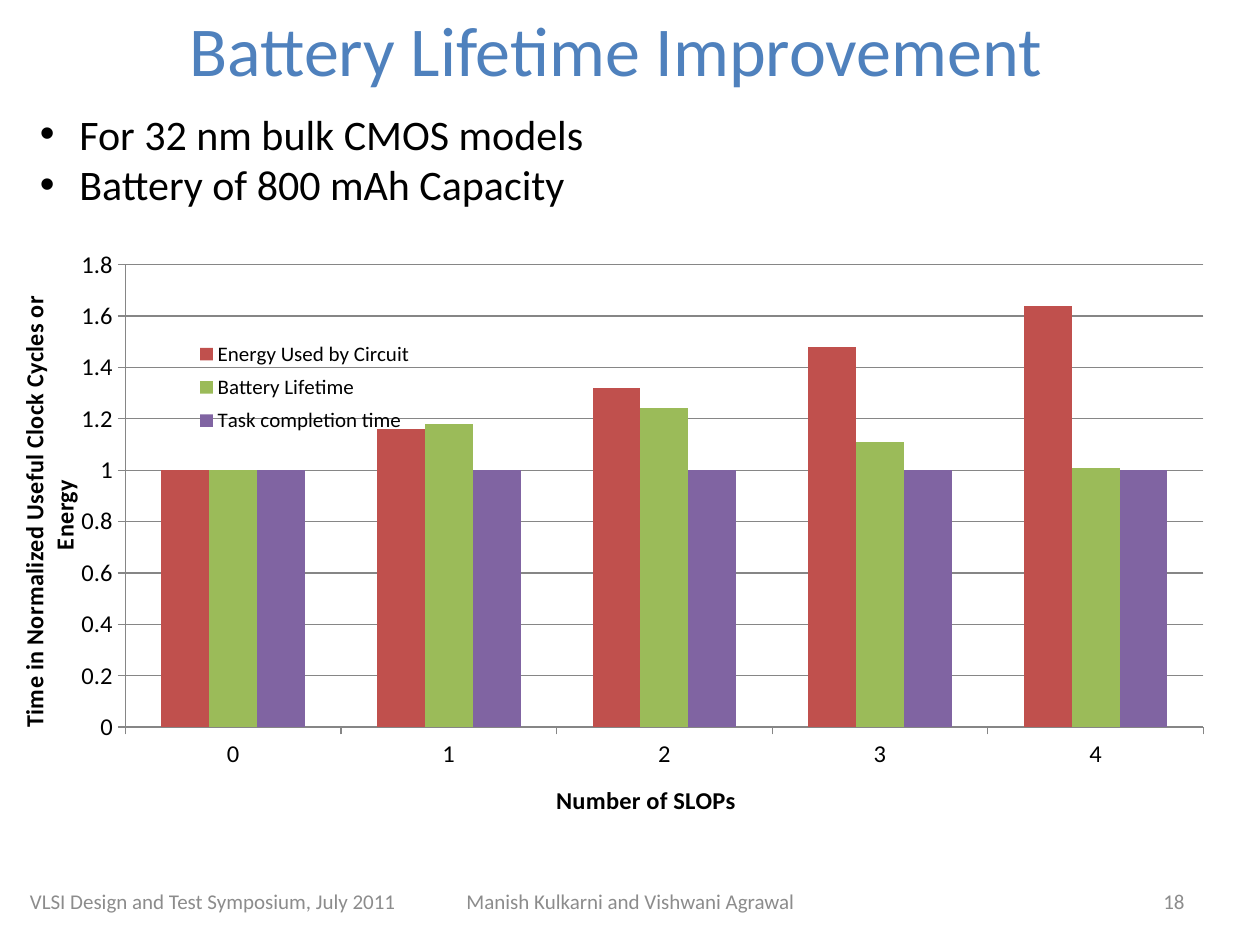
from dataclasses import dataclass

from lxml import etree
from pptx import Presentation
from pptx import util as u
from pptx.chart.data import CategoryChartData
from pptx.dml.color import RGBColor
from pptx.enum import chart as ch
from pptx.enum import text
from pptx.oxml import parse_xml
from pptx.oxml.ns import nsdecls, qn

Pt = u.Pt
FONT = "Calibri"
COLORS = {
    "title": "4F81BD",
    "text": "000000",
    "footer": "8C8C8C",
    "axis": "868686",
    "energy": "C0504D",
    "lifetime": "9BBB59",
    "task": "8064A2",
}


@dataclass
class Box:
    left: float
    top: float
    width: float
    height: float

    def emu(self) -> tuple:
        return Pt(self.left), Pt(self.top), Pt(self.width), Pt(self.height)


@dataclass
class Footer:
    words: str
    box: Box
    align: text.PP_ALIGN


@dataclass
class Series:
    name: str
    values: tuple
    color: str


FOOTERS = [
    Footer("VLSI Design and Test Symposium, July 2011",
           Box(10, 500.4, 235.5, 28.8), text.PP_ALIGN.LEFT),
    Footer("Manish Kulkarni and Vishwani Agrawal",
           Box(256.3, 500.4, 208, 28.8), text.PP_ALIGN.CENTER),
    Footer("18", Box(516.2, 500.4, 167.8, 28.8), text.PP_ALIGN.RIGHT),
]
BULLETS = ["For 32 nm bulk CMOS models", "Battery of 800 mAh Capacity"]
SERIES = [
    Series("Energy Used by Circuit ", (1, 1.16, 1.32, 1.48, 1.64), "energy"),
    Series("Battery Lifetime", (1, 1.18, 1.24, 1.11, 1.01), "lifetime"),
    Series("Task completion time", (1, 1, 1, 1, 1), "task"),
]


def rgb(name: str) -> RGBColor:
    return RGBColor.from_string(COLORS[name])


def style_font(font, size: float, color: str, bold: bool = False) -> None:
    font.name, font.size, font.bold = FONT, Pt(size), bold
    font.color.rgb = rgb(color)


def add_footer(slide, footer: Footer) -> None:
    tf = slide.shapes.add_textbox(*footer.box.emu()).text_frame
    tf.word_wrap = True
    tf.vertical_anchor = text.MSO_ANCHOR.MIDDLE
    p = tf.paragraphs[0]
    p.text, p.alignment = footer.words, footer.align
    style_font(p.font, 12, "footer")


def add_bullets(slide, lines: list, box: Box, indent: float) -> None:
    tf = slide.shapes.add_textbox(*box.emu()).text_frame
    tf.word_wrap = True
    for i, line in enumerate(lines):
        p = tf.paragraphs[0] if i == 0 else tf.add_paragraph()
        p.text = line
        style_font(p.font, 24, "text")
        pPr = p._p.get_or_add_pPr()
        pPr.set("marL", str(Pt(indent)))
        pPr.set("indent", str(-Pt(indent)))
        bullet_font = etree.Element(qn("a:buFont"), typeface="Arial")
        bullet = etree.Element(qn("a:buChar"), char="•")
        pPr.insert(0, bullet_font)
        bullet_font.addnext(bullet)


def place(element, after: str, target: str = "", **fractions: float) -> None:
    """Give a chart part a manual layout, in fractions of the chart."""
    for old in element.findall(qn("c:layout")):
        element.remove(old)
    inner = f'<c:layoutTarget val="{target}"/>' if target else ""
    inner += '<c:xMode val="edge"/><c:yMode val="edge"/>'
    inner += "".join(f'<c:{k} val="{v}"/>' for k, v in fractions.items())
    layout = parse_xml(f'<c:layout {nsdecls("c")}><c:manualLayout>{inner}'
                       "</c:manualLayout></c:layout>")
    previous = element.find(qn(after)) if after else None
    if previous is None:
        element.insert(0, layout)
    else:
        previous.addnext(layout)


def style_axis(axis, title: str, x: float, y: float) -> None:
    axis.major_tick_mark = ch.XL_TICK_MARK.OUTSIDE
    axis.minor_tick_mark = ch.XL_TICK_MARK.NONE
    style_font(axis.tick_labels.font, 14, "text")
    axis.format.line.color.rgb = rgb("axis")
    axis.format.line.width = Pt(0.75)
    p = axis.axis_title.text_frame.paragraphs[0]
    p.text = title
    style_font(p.font, 14, "text", bold=True)
    place(axis.axis_title._element, "c:tx", x=x, y=y)


def add_lifetime_chart(slide, box: Box) -> None:
    data = CategoryChartData()
    data.categories = [str(n) for n in range(5)]
    for item in SERIES:
        data.add_series(item.name, item.values)
    chart = slide.shapes.add_chart(
        ch.XL_CHART_TYPE.COLUMN_CLUSTERED, *box.emu(), data).chart
    chart.has_title = False
    style_font(chart.font, 10, "text")

    # Columns
    plot = chart.plots[0]
    plot.gap_width, plot.overlap = 150, 0
    plot.vary_by_categories = False
    for series, item in zip(plot.series, SERIES):
        series.format.fill.solid()
        series.format.fill.fore_color.rgb = rgb(item.color)
    place(chart._chartSpace.chart.plotArea, "", "inner",
          x=0.1, y=0.04, w=0.86, h=0.81)

    # Axes
    style_axis(chart.category_axis, "Number of SLOPs", 0.44, 0.94)
    axis = chart.value_axis
    style_axis(axis, "Time in Normalized Useful Clock Cycles or Energy", 0.01, 0.1)
    axis.minimum_scale, axis.maximum_scale, axis.major_unit = 0, 1.8, 0.2
    axis.tick_labels.number_format = "General"
    axis.tick_labels.number_format_is_linked = False
    axis.has_major_gridlines = True
    axis.major_gridlines.format.line.color.rgb = rgb("axis")
    axis.major_gridlines.format.line.width = Pt(0.75)

    # Legend over the plot
    chart.has_legend = True
    legend = chart.legend
    legend.position = ch.XL_LEGEND_POSITION.RIGHT
    legend.include_in_layout = False
    style_font(legend.font, 12, "text")
    place(legend._element, "c:legendPos", x=0.15, y=0.16, w=0.19, h=0.19)


def main() -> None:
    prs = Presentation()
    prs.slide_width, prs.slide_height = Pt(720), Pt(540)
    slide = prs.slides.add_slide(prs.slide_layouts[5])

    # Title
    title = slide.shapes.title
    title.left, title.top, title.width, title.height = Box(32.4, 0, 648, 67).emu()
    title.text_frame.vertical_anchor = text.MSO_ANCHOR.TOP
    p = title.text_frame.paragraphs[0]
    p.text, p.alignment = "Battery Lifetime Improvement ", text.PP_ALIGN.CENTER
    style_font(p.font, 40, "title")

    # Body
    add_bullets(slide, BULLETS, Box(15.8, 58.3, 666.7, 65.5), indent=22.5)
    add_lifetime_chart(slide, Box(0, 138.2, 716.4, 332))

    # Footer row
    for footer in FOOTERS:
        add_footer(slide, footer)

    prs.save("out.pptx")


if __name__ == "__main__":
    main()
